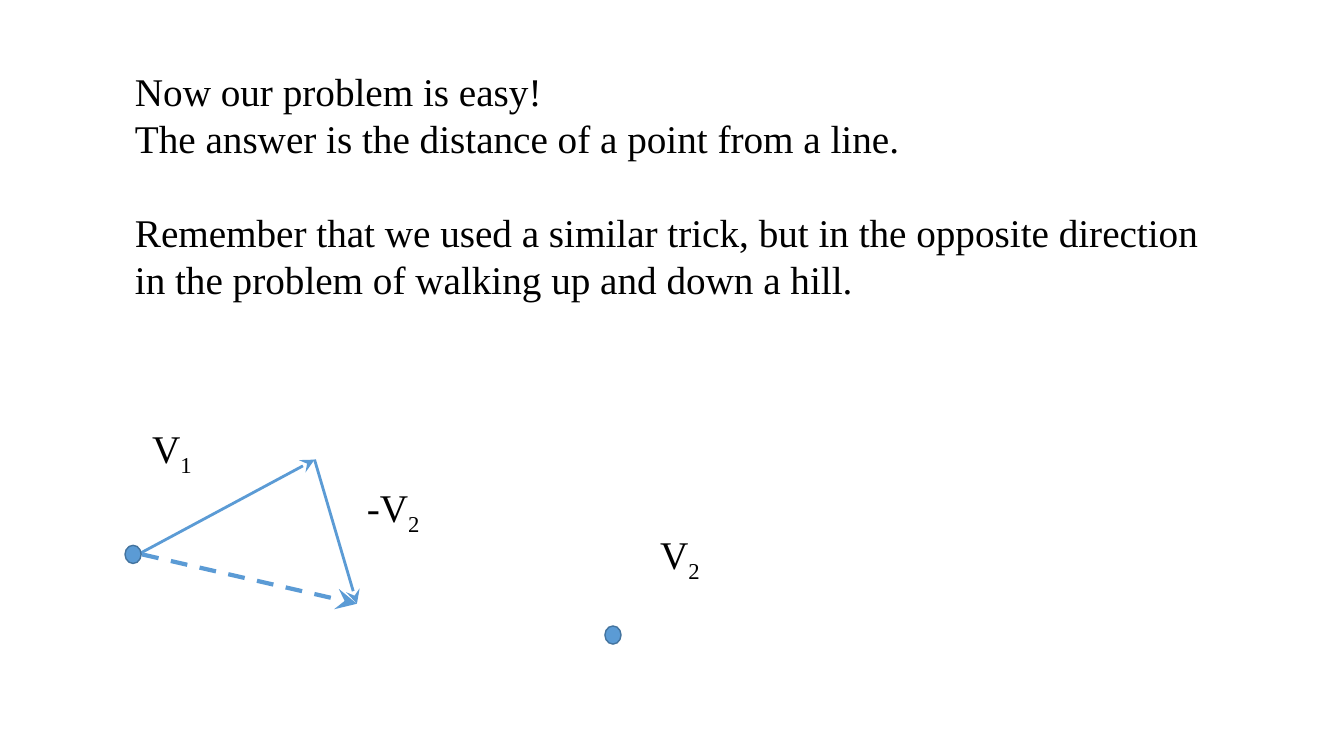
import pptx
import pptx.dml.color
import pptx.enum.dml
import pptx.enum.shapes
import pptx.oxml.ns
import pptx.util
from lxml import etree
from pptx.util import Inches, Pt

BLACK = pptx.dml.color.RGBColor(0x00, 0x00, 0x00)
BLUE = pptx.dml.color.RGBColor(0x5B, 0x9B, 0xD5)
DARK_BLUE = pptx.dml.color.RGBColor(0x43, 0x73, 0x9E)
FONT = "Times New Roman"
LINE_PITCH = 33.6
DOT_WIDTH, DOT_HEIGHT = 0.16, 0.18


def add_run(paragraph, wording):
    """Add one run in the slide's text style and return it."""
    run = paragraph.add_run()
    run.text = wording
    run.font.name = FONT
    run.font.size = Pt(28)
    run.font.color.rgb = BLACK
    return run


def add_frame(slide, left, top, width, height):
    """Add a wrapping text box and return its text frame."""
    frame = slide.shapes.add_textbox(
        Inches(left), Inches(top), Inches(width), Inches(height)).text_frame
    frame.word_wrap = True
    return frame


def add_explanation(slide, left, top, width, height):
    """Write the explanation, with a one-line gap before the reminder."""
    statements = [
        ("Now our problem is easy!", 0),
        ("The answer is the distance of a point from a line.", 0),
        ("Remember that we used a similar trick, but in the opposite direction "
         "in the problem of walking up and down a hill.", LINE_PITCH),
    ]
    frame = add_frame(slide, left, top, width, height)
    for index, (statement, gap) in enumerate(statements):
        paragraph = frame.paragraphs[0] if index == 0 else frame.add_paragraph()
        paragraph.line_spacing = Pt(LINE_PITCH)
        paragraph.space_before = Pt(gap)
        add_run(paragraph, statement)


def add_vector_label(slide, left, top, letter, index):
    """Write a vector name with its subscript index."""
    paragraph = add_frame(slide, left, top, 0.84, 0.57).paragraphs[0]
    add_run(paragraph, letter)
    subscript = add_run(paragraph, index)
    subscript.font._element.set("baseline", "-25000")


def add_dot(slide, left, top):
    """Draw a point as a small dot."""
    dot = slide.shapes.add_shape(
        pptx.enum.shapes.MSO_SHAPE.OVAL, Inches(left), Inches(top),
        Inches(DOT_WIDTH), Inches(DOT_HEIGHT))
    dot.shadow.inherit = False
    dot.fill.solid()
    dot.fill.fore_color.rgb = BLUE
    dot.line.color.rgb = DARK_BLUE
    dot.line.width = Pt(1)


def add_vector(slide, start, tip, weight=2, dashed=False):
    """Draw an arrow from start to tip."""
    vector = slide.shapes.add_connector(
        pptx.enum.shapes.MSO_CONNECTOR.STRAIGHT,
        *(Inches(value) for value in (*start, *tip)))
    vector.line.color.rgb = BLUE
    vector.line.width = Pt(weight)
    if dashed:
        vector.line.dash_style = pptx.enum.dml.MSO_LINE.DASH
    qn = pptx.oxml.ns.qn
    etree.SubElement(vector.line._get_or_add_ln(), qn("a:tailEnd"),
                     type="stealth", w="lg", len="lg")
    etree.SubElement(vector._element.spPr, qn("a:effectLst"))


def add_vector_diagram(slide, left, top):
    """Draw the vector triangle and the second point from a top left corner."""
    apex = (left + 1.88, top + 0.4)
    corner = (left + 2.3, top + 1.83)
    add_vector(slide, (left + 0.13, top + 1.34), apex)
    add_vector_label(slide, left + 0.17, top, "V", "1")
    add_vector_label(slide, left + 5.21, top + 1.05, "V", "2")
    add_dot(slide, left + 4.76, top + 2.05)
    add_dot(slide, left, top + 1.25)
    add_vector(slide, apex, corner)
    add_vector_label(slide, left + 2.3, top + 0.59, "-V", "2")
    add_vector(slide, (left + 0.17, top + 1.34), corner, weight=3, dashed=True)


def main():
    """Build the slide and save it."""
    deck = pptx.Presentation()
    deck.slide_width = Inches(13.33)
    deck.slide_height = Inches(7.5)
    slide = deck.slides.add_slide(deck.slide_layouts[6])
    add_explanation(slide, 1.24, 0.62, 10.93, 2.46)
    add_vector_diagram(slide, 1.24, 4.16)
    deck.save("out.pptx")


if __name__ == "__main__":
    main()
